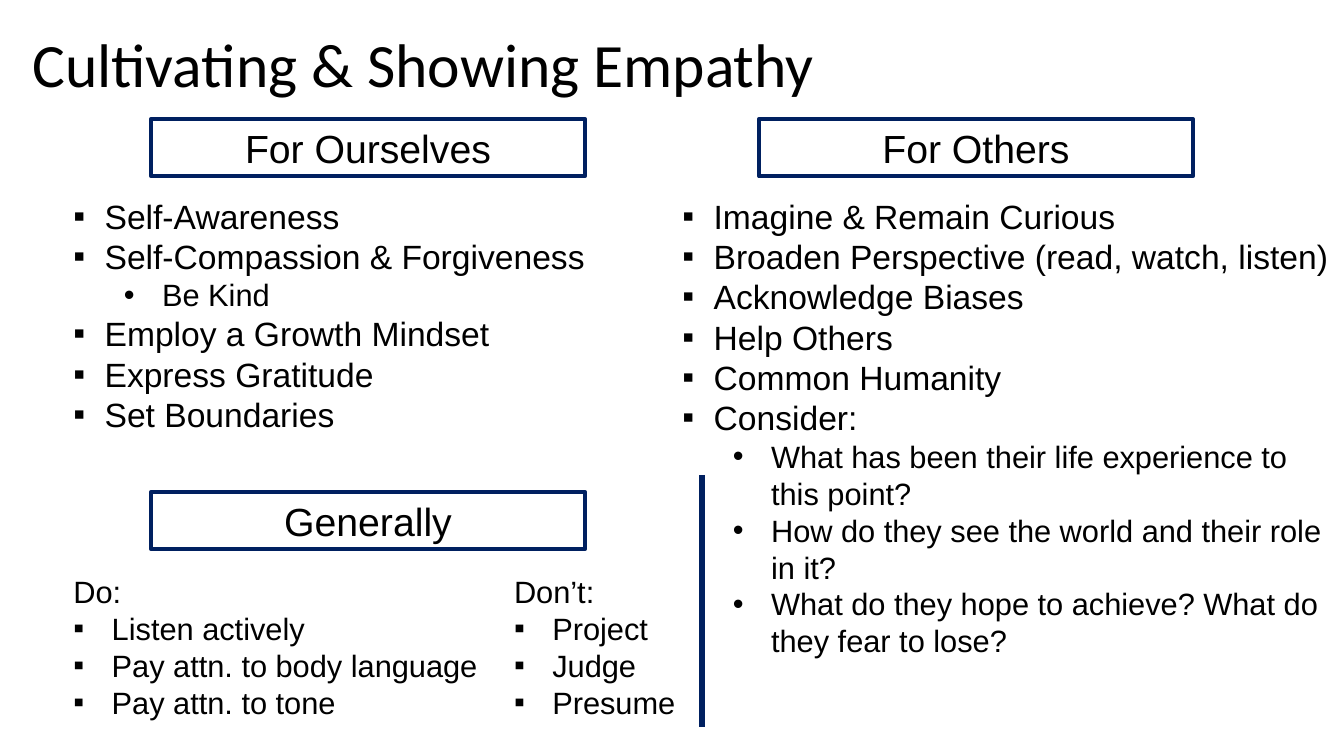
from dataclasses import dataclass

from lxml import etree
from pptx import Presentation
from pptx import util as u
from pptx.dml.color import RGBColor
from pptx.enum import shapes, text
from pptx.oxml.ns import qn

PX = 9144  # EMU per px, 100 px to the inch
COLORS = {"text": "000000", "navy": "002060", "paper": "FFFFFF"}


@dataclass(frozen=True)
class Style:
    size: int
    bullet: str = ""
    margin: int = 0
    hang: int = 0
    level: int = 0


@dataclass(frozen=True)
class Box:
    left: int
    top: int
    width: int
    height: int

    def emu(self) -> list[u.Emu]:
        return [px(n) for n in (self.left, self.top, self.width, self.height)]


@dataclass(frozen=True)
class Heading:
    label: str
    left: int
    top: int


@dataclass(frozen=True)
class BulletList:
    box: Box
    items: list[tuple[Style, str]]


MAIN = Style(24, "▪", 31, 31)
SUB = Style(22, "•", 88, 38, 1)
LEAD = Style(22)
TIP = Style(22, "▪", 38, 38)

HEADINGS = [
    Heading("For Ourselves", 150, 118),
    Heading("For Others", 753, 118),
    Heading("Generally", 150, 488),
]

LISTS = [
    BulletList(Box(63, 189, 604, 249), [
        (MAIN, "Self-Awareness"),
        (MAIN, "Self-Compassion & Forgiveness"),
        (SUB, "Be Kind"),
        (MAIN, "Employ a Growth Mindset"),
        (MAIN, "Express Gratitude"),
        (MAIN, "Set Boundaries"),
    ]),
    BulletList(Box(667, 189, 667, 475), [
        (MAIN, "Imagine & Remain Curious"),
        (MAIN, "Broaden Perspective (read, watch, listen)"),
        (MAIN, "Acknowledge Biases"),
        (MAIN, "Help Others"),
        (MAIN, "Common Humanity"),
        (MAIN, "Consider:"),
        (SUB, "What has been their life experience to this point?"),
        (SUB, "How do they see the world and their role in it?"),
        (SUB, "What do they hope to achieve? What do they fear to lose?"),
    ]),
    BulletList(Box(63, 563, 604, 158), [
        (LEAD, "Do:"),
        (TIP, "Listen actively"),
        (TIP, "Pay attn. to body language"),
        (TIP, "Pay attn. to tone"),
    ]),
    BulletList(Box(500, 563, 246, 158), [
        (LEAD, "Don’t:"),
        (TIP, "Project"),
        (TIP, "Judge"),
        (TIP, "Presume"),
    ]),
]


def px(n: int) -> u.Emu:
    return u.Emu(n * PX)


def color(name: str) -> RGBColor:
    return RGBColor.from_string(COLORS[name])


def format_runs(p, size: int, face: str = "Arial") -> None:
    for r in p.runs:
        r.font.size = u.Pt(size)
        r.font.name = face
        r.font.color.rgb = color("text")


def set_bullet(p, style: Style) -> None:
    pPr = p._p.get_or_add_pPr()
    pPr.set("marL", str(px(style.margin)))
    pPr.set("indent", str(px(-style.hang)))
    etree.SubElement(pPr, qn("a:buFont")).set("typeface", "Arial")
    etree.SubElement(pPr, qn("a:buChar")).set("char", style.bullet)


def add_title(s, label: str, box: Box) -> None:
    title = s.shapes.title
    title.left, title.top, title.width, title.height = box.emu()
    title.fill.solid()
    title.fill.fore_color.rgb = color("paper")
    tf = title.text_frame
    tf.text = label
    tf.auto_size = text.MSO_AUTO_SIZE.NONE
    tf.vertical_anchor = text.MSO_ANCHOR.MIDDLE
    p = tf.paragraphs[0]
    p.alignment = text.PP_ALIGN.LEFT
    p.line_spacing = 0.9
    format_runs(p, 44, "Calibri")


def add_heading(s, heading: Heading) -> None:
    box = Box(heading.left, heading.top, 430, 57)
    sp = s.shapes.add_shape(shapes.MSO_SHAPE.RECTANGLE, *box.emu())
    sp.shadow.inherit = False
    sp.fill.background()
    sp.line.color.rgb = color("navy")
    sp.line.width = u.Pt(3)
    tf = sp.text_frame
    tf.text = heading.label
    tf.word_wrap = True
    tf.auto_size = text.MSO_AUTO_SIZE.SHAPE_TO_FIT_TEXT
    tf.vertical_anchor = text.MSO_ANCHOR.TOP
    p = tf.paragraphs[0]
    p.alignment = text.PP_ALIGN.CENTER
    format_runs(p, 28)


def add_list(s, block: BulletList) -> None:
    tf = s.shapes.add_textbox(*block.box.emu()).text_frame
    tf.word_wrap = True
    tf.auto_size = text.MSO_AUTO_SIZE.SHAPE_TO_FIT_TEXT
    tf.text = "\n".join(label for _, label in block.items)
    for p, (style, _) in zip(tf.paragraphs, block.items):
        p.level = style.level
        if style.bullet:
            set_bullet(p, style)
        format_runs(p, style.size)


def add_divider(s, x: int, top: int, bottom: int) -> None:
    line = s.shapes.add_connector(
        shapes.MSO_CONNECTOR.STRAIGHT, px(x), px(top), px(x), px(bottom))
    line.line.color.rgb = color("navy")
    line.line.width = u.Pt(4.5)
    etree.SubElement(line._element.spPr, qn("a:effectLst"))


def main() -> None:
    prs = Presentation()
    prs.slide_width, prs.slide_height = px(1333), px(750)
    s = prs.slides.add_slide(prs.slide_layouts.get_by_name("Title Only"))

    # Title
    add_title(s, "Cultivating & Showing Empathy", Box(22, 18, 1150, 99))

    # Framed headings and their lists
    for heading in HEADINGS:
        add_heading(s, heading)
    for block in LISTS:
        add_list(s, block)

    # Rule between the columns
    add_divider(s, 696, 471, 721)

    prs.save("out.pptx")


if __name__ == "__main__":
    main()
